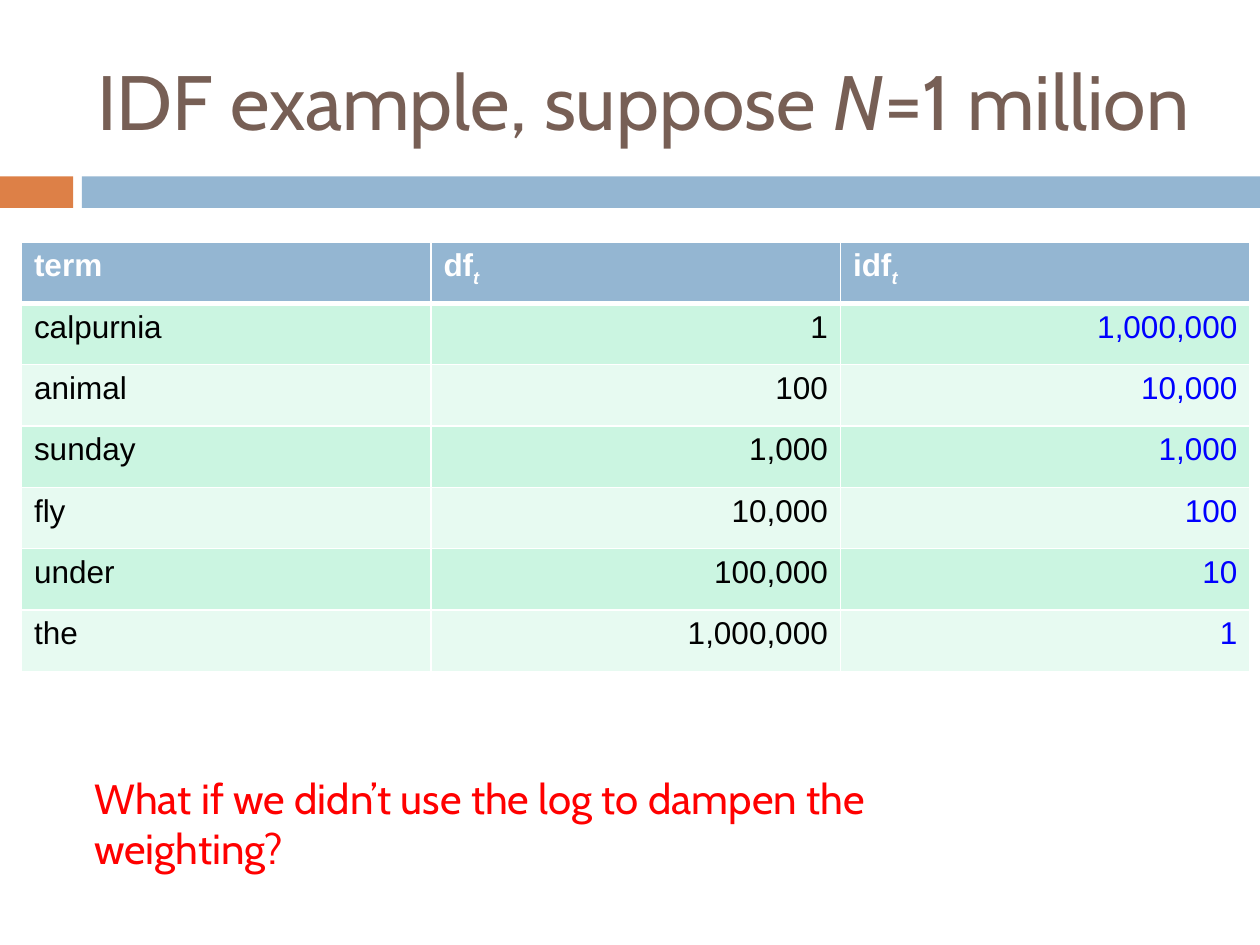
from dataclasses import dataclass

from lxml.etree import SubElement
from pptx import Presentation
from pptx.dml.color import RGBColor
from pptx.enum.shapes import MSO_SHAPE
from pptx.enum.text import MSO_ANCHOR, PP_ALIGN
from pptx.oxml.ns import qn
from pptx.util import Inches, Pt

BROWN = RGBColor(0x77, 0x5F, 0x55)
ORANGE = RGBColor(0xDD, 0x80, 0x47)
STEEL = RGBColor(0x94, 0xB6, 0xD2)
MINT = RGBColor(0xCB, 0xF5, 0xE1)
PALE_MINT = RGBColor(0xE7, 0xFA, 0xF1)
WHITE = RGBColor(0xFF, 0xFF, 0xFF)
BLACK = RGBColor(0x00, 0x00, 0x00)
BLUE = RGBColor(0x00, 0x00, 0xFF)
RED = RGBColor(0xFF, 0x00, 0x00)

COLUMN_WIDTH = 3.25
ROW_HEIGHT = 3.41 / 7


@dataclass
class Bar:
    left: float
    width: float
    color: RGBColor


@dataclass
class TermRow:
    term: str
    document_frequency: str
    inverse_frequency: str


BARS = [Bar(0, 0.58, ORANGE), Bar(0.65, 9.35, STEEL)]
HEADERS = [("term", ""), ("df", "t"), ("idf", "t")]
TERMS = [
    TermRow("calpurnia", "1", "1,000,000"),
    TermRow("animal", "100", "10,000"),
    TermRow("sunday", "1,000", "1,000"),
    TermRow("fly", "10,000", "100"),
    TermRow("under", "100,000", "10"),
    TermRow("the", "1,000,000", "1"),
]


def add_text(paragraph, text: str, *, size: float, color: RGBColor, font: str = "Arial",
             bold: bool = False, italic: bool = False, baseline: int = 0,
             align: PP_ALIGN = PP_ALIGN.LEFT) -> None:
    paragraph.alignment = align
    run = paragraph.add_run()
    run.text = text
    run.font.name = font
    run.font.size = Pt(size)
    run.font.bold = bold
    run.font.italic = italic
    run.font.color.rgb = color
    if baseline:
        run.font._element.set("baseline", str(baseline * 1000))


def draw_bar(slide, bar: Bar) -> None:
    shape = slide.shapes.add_shape(
        MSO_SHAPE.RECTANGLE, Inches(bar.left), Inches(1.4), Inches(bar.width), Inches(0.25))
    shape.shadow.inherit = False
    shape.fill.solid()
    shape.fill.fore_color.rgb = bar.color
    shape.line.fill.background()


def style_cell(cell, fill: RGBColor, top: float = 1, bottom: float = 1) -> None:
    """Give the cell white borders, widths in points, and a solid fill."""
    properties = cell._tc.get_or_add_tcPr()
    for side, width in (("L", 1), ("R", 1), ("T", top), ("B", bottom)):
        line = SubElement(properties, qn(f"a:ln{side}"), w=str(Pt(width)))
        solid = SubElement(line, qn("a:solidFill"))
        SubElement(solid, qn("a:srgbClr"), val=str(WHITE))
    cell.fill.solid()
    cell.fill.fore_color.rgb = fill


def draw_term_table(slide) -> None:
    row_count, column_count = len(TERMS) + 1, len(HEADERS)
    table = slide.shapes.add_table(
        row_count, column_count, Inches(0.17), Inches(1.92),
        Inches(COLUMN_WIDTH * column_count), Inches(ROW_HEIGHT * row_count)).table

    for column, (label, subscript) in enumerate(HEADERS):
        cell = table.cell(0, column)
        style_cell(cell, STEEL, bottom=3)
        paragraph = cell.text_frame.paragraphs[0]
        add_text(paragraph, label, size=18, color=WHITE, bold=True)
        if subscript:
            add_text(paragraph, subscript, size=18, color=WHITE, bold=True,
                     italic=True, baseline=-25)

    for row, entry in enumerate(TERMS, start=1):
        columns = [
            (entry.term, BLACK, PP_ALIGN.LEFT),
            (entry.document_frequency, BLACK, PP_ALIGN.RIGHT),
            (entry.inverse_frequency, BLUE, PP_ALIGN.RIGHT),
        ]
        for column, (text, color, align) in enumerate(columns):
            cell = table.cell(row, column)
            style_cell(cell, MINT if row % 2 else PALE_MINT, top=3 if row == 1 else 1)
            add_text(cell.text_frame.paragraphs[0], text, size=18, color=color, align=align)


def draw_title(slide) -> None:
    title = slide.shapes.title
    title.left, title.top = Inches(0.67), Inches(0.25)
    title.width, title.height = Inches(8.92), Inches(1.08)
    title.text_frame.vertical_anchor = MSO_ANCHOR.MIDDLE
    paragraph = title.text_frame.paragraphs[0]
    for text, italic in (("IDF example, suppose ", False), ("N", True), ("=1 million", False)):
        add_text(paragraph, text, size=44, color=BROWN, font="Cabin", italic=italic)


def draw_question(slide) -> None:
    box = slide.shapes.add_textbox(Inches(0.65), Inches(6.08), Inches(7.67), Inches(0.5))
    box.text_frame.word_wrap = True
    add_text(box.text_frame.paragraphs[0],
             "What if we didn’t use the log to dampen the weighting?",
             size=24, color=RED, font="Cabin")


def main() -> None:
    presentation = Presentation()
    presentation.slide_width, presentation.slide_height = Inches(10), Inches(7.5)
    slide = presentation.slides.add_slide(presentation.slide_layouts.get_by_name("Title Only"))
    for bar in BARS:
        draw_bar(slide, bar)
    draw_title(slide)
    draw_term_table(slide)
    draw_question(slide)
    presentation.save("out.pptx")


if __name__ == "__main__":
    main()
